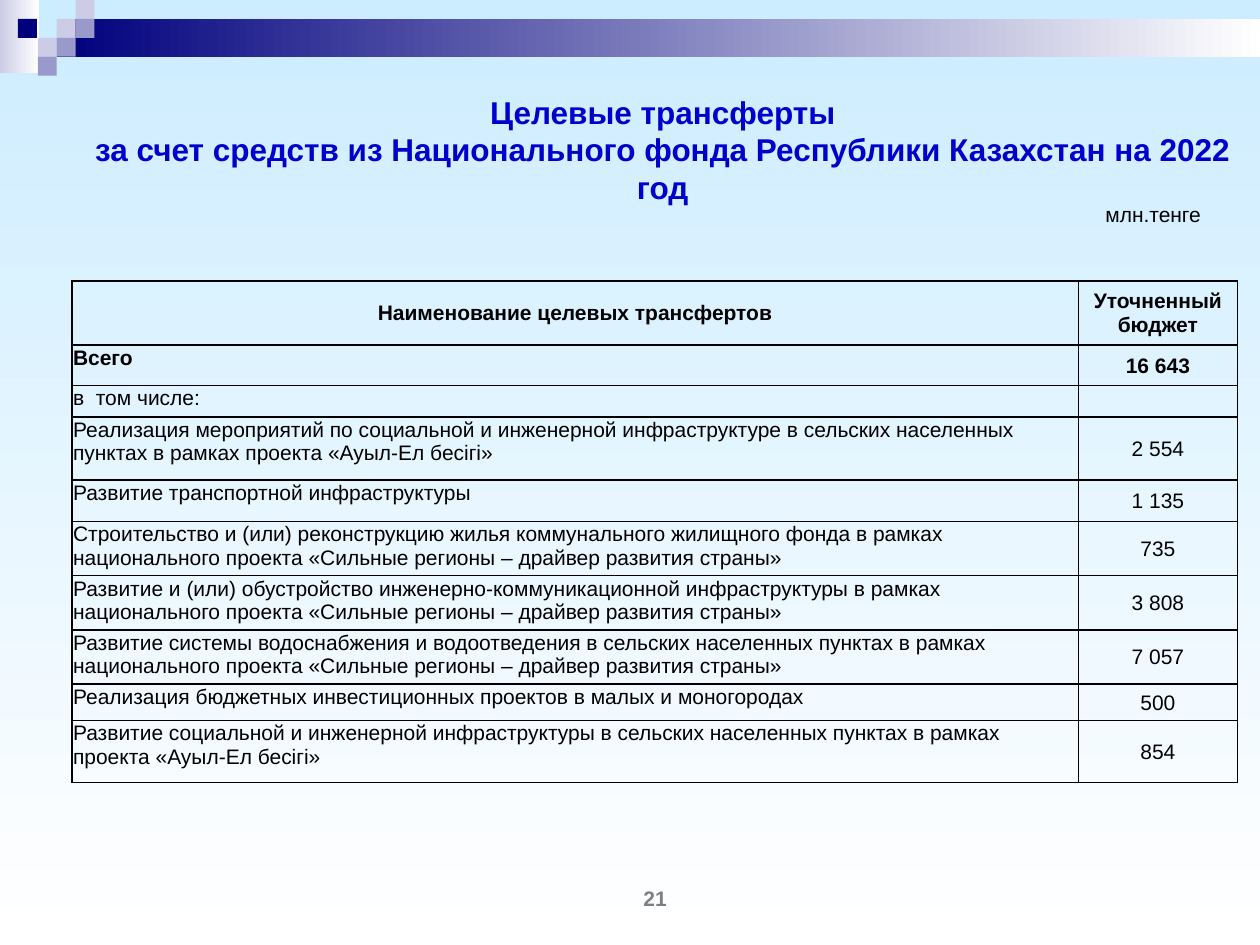
from lxml import etree
from pptx import Presentation
from pptx import util as u
from pptx.dml.color import RGBColor
from pptx.enum import shapes, text
from pptx.oxml.ns import qn

COLORS = {"sky": "CCECFF", "white": "FFFFFF", "navy": "00007D", "lilac": "CCCCE6",
          "violet": "9999CC", "title": "0000CC", "black": "000000", "gray": "7F7F7F"}
FONT = "Arial"
WIDTH, HEIGHT = 10, 7.5
TILE = 0.15

TITLE = "Целевые трансферты\vза счет средств из Национального фонда Республики Казахстан на 2022 год"
UNIT = "млн.тенге"
PAGE_NUMBER = "21"
REGIONS = "национального проекта «Сильные регионы – драйвер развития страны»"
TRANSFERS = [
    ("Наименование целевых трансфертов", "Уточненный бюджет", 0.51),
    ("Всего", "16 643", 0.32),
    ("в  том числе:", "", 0.25),
    ("Реализация мероприятий по социальной и инженерной инфраструктуре в сельских населенных "
     "пунктах в рамках проекта «Ауыл-Ел бесігі»", "2 554", 0.5),
    ("Развитие транспортной инфраструктуры", "1 135", 0.33),
    ("Строительство и (или) реконструкцию жилья коммунального жилищного фонда в рамках "
     + REGIONS, "735", 0.43),
    ("Развитие и (или) обустройство инженерно-коммуникационной инфраструктуры в рамках "
     + REGIONS, "3 808", 0.43),
    ("Развитие системы водоснабжения и водоотведения в сельских населенных пунктах в рамках "
     + REGIONS, "7 057", 0.43),
    ("Реализация бюджетных инвестиционных проектов в малых и моногородах", "500", 0.29),
    ("Развитие социальной и инженерной инфраструктуры в сельских населенных пунктах в рамках "
     "проекта «Ауыл-Ел бесігі»", "854", 0.49),
]
COLUMN_WIDTHS = (7.99, 1.26)
BOLD_ROWS = 2
BANDS = [((0, 0, 0.31, 0.58), "lilac"), ((3 * TILE, TILE, WIDTH - 3 * TILE, 2 * TILE), "navy")]
TILES = [(3, 1, "lilac"), (4, 0, "lilac"), (4, 1, "violet"), (2, 2, "lilac"),
         (0.95, 1, "navy"), (3, 2, "violet"), (2, 3, "violet")]


def rgb(name):
    return RGBColor.from_string(COLORS[name])


def fade(fill, start, angle):
    fill.gradient()
    fill.gradient_angle = angle
    for stop, name, position in zip(fill.gradient_stops, (start, "white"), (0, 1)):
        stop.color.rgb = rgb(name)
        stop.position = position


def add_block(slide, box):
    block = slide.shapes.add_shape(shapes.MSO_SHAPE.RECTANGLE, *map(u.Inches, box))
    block.shadow.inherit = False
    block.line.fill.background()
    return block


def style(paragraph, size, color, bold, align):
    paragraph.alignment = align
    font = paragraph.font
    font.name, font.size, font.bold = FONT, u.Pt(size), bold
    font.color.rgb = rgb(color)


def add_label(slide, words, box, color, bold, align):
    label = slide.shapes.add_textbox(*map(u.Inches, box))
    frame = label.text_frame
    frame.word_wrap = True
    frame.vertical_anchor = text.MSO_ANCHOR.MIDDLE
    frame.text = words
    style(frame.paragraphs[0], 12, color, bold, align)


def add_borders(cell):
    properties = cell._tc.get_or_add_tcPr()
    for place, side in enumerate(("a:lnL", "a:lnR", "a:lnT", "a:lnB")):
        border = etree.Element(qn(side), w=str(u.Pt(1)))
        fill = etree.SubElement(border, qn("a:solidFill"))
        etree.SubElement(fill, qn("a:srgbClr"), val=COLORS["black"])
        properties.insert(place, border)


def add_transfers(slide):
    heights = [height for *_, height in TRANSFERS]
    box = (0.57, 2.23, sum(COLUMN_WIDTHS), sum(heights))
    table = slide.shapes.add_table(len(TRANSFERS), len(COLUMN_WIDTHS), *map(u.Inches, box)).table
    for column, width in zip(table.columns, COLUMN_WIDTHS):
        column.width = u.Inches(width)
    for row, (*words, height) in enumerate(TRANSFERS):
        table.rows[row].height = u.Inches(height)
        for col, word in enumerate(words):
            cell = table.cell(row, col)
            header = row == 0
            centred = header or col == 1
            cell.text = word
            cell.fill.background()
            cell.margin_left = cell.margin_right = u.Inches(0.1 if header else 0.01)
            cell.margin_top = u.Inches(0.05 if header else 0.01)
            cell.margin_bottom = u.Inches(0.05 if header else 0)
            cell.vertical_anchor = text.MSO_ANCHOR.MIDDLE if centred else text.MSO_ANCHOR.TOP
            style(cell.text_frame.paragraphs[0], 12, "black", row < BOLD_ROWS,
                  text.PP_ALIGN.CENTER if centred else text.PP_ALIGN.LEFT)
            add_borders(cell)


def main():
    deck = Presentation()
    deck.slide_width, deck.slide_height = u.Inches(WIDTH), u.Inches(HEIGHT)
    slide = deck.slides.add_slide(deck.slide_layouts[5])
    fade(slide.background.fill, "sky", 270)

    for box, color in BANDS:
        fade(add_block(slide, box).fill, color, 0)
    for col, row, color in TILES:
        tile = add_block(slide, (col * TILE, row * TILE, TILE, TILE))
        tile.fill.solid()
        tile.fill.fore_color.rgb = rgb(color)

    title = slide.shapes.title
    title.left, title.top, title.width, title.height = map(u.Inches, (0.49, 0.95, 9.54, 0.47))
    frame = title.text_frame
    frame.text = TITLE
    frame.auto_size = text.MSO_AUTO_SIZE.NONE
    frame.vertical_anchor = text.MSO_ANCHOR.MIDDLE
    style(frame.paragraphs[0], 18, "title", True, text.PP_ALIGN.CENTER)

    add_transfers(slide)
    add_label(slide, UNIT, (8.25, 1.58, 1.38, 0.24), "black", False, text.PP_ALIGN.RIGHT)
    add_label(slide, PAGE_NUMBER, (4.2, 7.01, 2, 0.24), "gray", True, text.PP_ALIGN.CENTER)
    deck.save("out.pptx")


if __name__ == "__main__":
    main()
